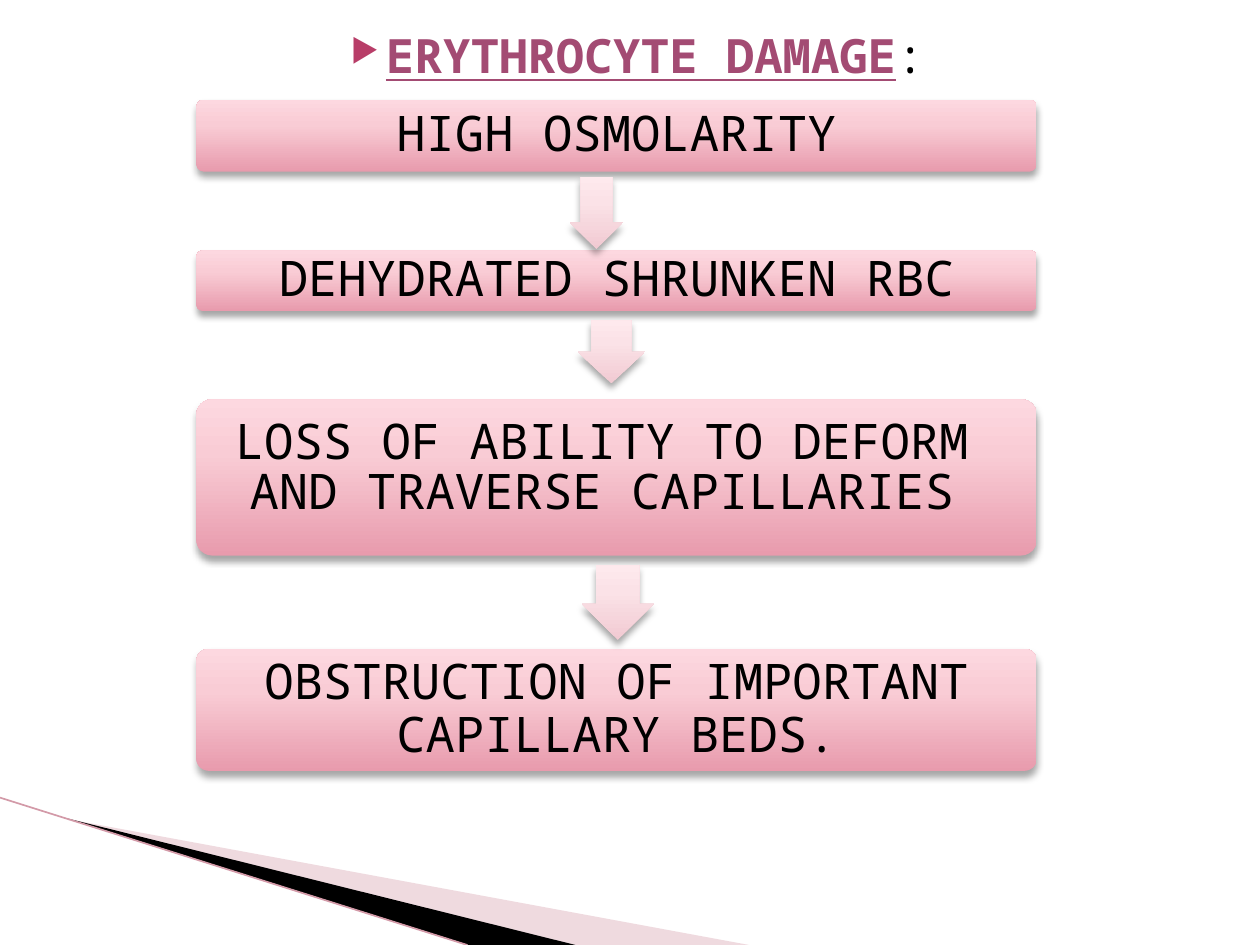
from lxml import etree
from pptx import Presentation
from pptx.dml.color import RGBColor
from pptx.enum.shapes import MSO_CONNECTOR, MSO_SHAPE
from pptx.enum.text import MSO_ANCHOR, PP_ALIGN
from pptx.oxml.ns import qn
from pptx.util import Cm, Pt

STRAIGHT = MSO_CONNECTOR.STRAIGHT
ROUNDED = MSO_SHAPE.ROUNDED_RECTANGLE
DOWN_ARROW = MSO_SHAPE.DOWN_ARROW
MIDDLE = MSO_ANCHOR.MIDDLE
CENTER = PP_ALIGN.CENTER

STEP_GRADIENT = [(0, "E89BAD"), (65, "F9CCD5"), (100, "FDD8E0")]
ARROW_GRADIENT = [(0, "F1CAD2"), (65, "FBE2E7"), (100, "FEE9ED")]


def color(hex_code):
    return RGBColor.from_string(hex_code)


def add_xml(parent, tag, **attributes):
    node = etree.SubElement(parent, qn(tag))
    for name, value in attributes.items():
        node.set(name, str(value))
    return node


class FlowSlide:
    font = "Noto Sans Mono"
    ink = "000000"

    def __init__(self, slide):
        self.slide = slide
        self.shapes = slide.shapes

    def style_run(self, run, size, hex_code, bold=False, underline=False):
        run.font.name = self.font
        run.font.size = Pt(size)
        run.font.bold = bold
        run.font.underline = underline
        run.font.color.rgb = color(hex_code)

    def wedge(self, points, hex_code, opacity=100):
        corners = [(Cm(x), Cm(y)) for x, y in points]
        builder = self.shapes.build_freeform(*corners[0])
        builder.add_line_segments(corners[1:], close=True)
        wedge = builder.convert_to_shape()
        wedge.shadow.inherit = False
        wedge.fill.solid()
        wedge.fill.fore_color.rgb = color(hex_code)
        wedge.line.fill.background()
        if opacity < 100:
            tint = next(wedge.fill._xPr.iter(qn("a:srgbClr")))
            add_xml(tint, "a:alpha", val=opacity * 1000)

    def edge(self, x1, y1, x2, y2, hex_code, width):
        edge = self.shapes.add_connector(STRAIGHT, Cm(x1), Cm(y1), Cm(x2), Cm(y2))
        edge.line.color.rgb = color(hex_code)
        edge.line.width = Pt(width)
        add_xml(edge._element.spPr, "a:effectLst")

    def heading(self, left, top, width, height, title, suffix):
        box = self.shapes.add_textbox(Cm(left), Cm(top), Cm(width), Cm(height))
        box.text_frame.word_wrap = True
        line = box.text_frame.paragraphs[0]
        line.alignment = CENTER
        properties = line._p.get_or_add_pPr()
        properties.set("marL", str(Cm(1.02)))
        properties.set("indent", str(-Cm(0.71)))
        add_xml(add_xml(properties, "a:buClr"), "a:srgbClr", val="B83D68")
        add_xml(properties, "a:buSzPct", val=68000)
        add_xml(properties, "a:buChar", char="▶")
        for text, hex_code, strong in ((title, "A34B73", True), (suffix, self.ink, False)):
            run = line.add_run()
            run.text = text
            self.style_run(run, 27, hex_code, strong, strong)

    def raised(self, preset, left, top, width, height, adjustments, gradient):
        """A borderless shape with a vertical gradient and a soft shadow."""
        shape = self.shapes.add_shape(preset, Cm(left), Cm(top), Cm(width), Cm(height))
        for index, value in enumerate(adjustments):
            shape.adjustments[index] = value
        shape.line.fill.background()
        shape.fill.gradient()
        shape.fill.gradient_angle = 90
        properties = shape._element.spPr
        stops = next(properties.iter(qn("a:gsLst")))
        for stop in list(stops):
            stops.remove(stop)
        for position, hex_code in gradient:
            stop = add_xml(stops, "a:gs", pos=position * 1000)
            add_xml(stop, "a:srgbClr", val=hex_code)
        shape.shadow.inherit = False
        shadow = add_xml(properties.find(qn("a:effectLst")), "a:outerShdw",
                         blurRad=Pt(4), dist=Pt(3), dir=5400000, rotWithShape=0)
        shade = add_xml(shadow, "a:srgbClr", val="000000")
        add_xml(shade, "a:alpha", val=35000)
        return shape

    def step(self, top, height, text, line_spacing):
        step = self.raised(ROUNDED, 3.96, top, 16.94, height, [0.1], STEP_GRADIENT)
        frame = step.text_frame
        frame.word_wrap = True
        frame.vertical_anchor = MIDDLE
        frame.margin_left = frame.margin_right = Cm(0.3)
        frame.margin_top = frame.margin_bottom = Cm(0.3)
        frame.text = text
        for paragraph in frame.paragraphs:
            paragraph.alignment = CENTER
            paragraph.line_spacing = line_spacing
            paragraph.space_after = Pt(9.8)
            for run in paragraph.runs:
                self.style_run(run, 28, self.ink)

    def arrow(self, left, top, width, height):
        self.raised(DOWN_ARROW, left, top, width, height, [0.6, 0.5], ARROW_GRADIENT)


def main():
    deck = Presentation()
    deck.slide_width, deck.slide_height = Cm(25.4), Cm(19.05)
    flow = FlowSlide(deck.slides.add_slide(deck.slide_layouts[6]))

    # Corner decoration
    flow.wedge([(1.4, 16.52), (15.1, 19.05), (11.58, 19.05)], "D8A3AF", 40)
    flow.wedge([(1.36, 16.5), (11.6, 19.05), (9.45, 19.05)], "000000")
    flow.edge(0, 16.08, 9.42, 19.05, "D39AA8", 0.95)

    # Heading
    flow.heading(1.27, 0.41, 22.86, 1.5, "ERYTHROCYTE DAMAGE", ":")

    # Steps of the flow
    steps = [
        (2.01, 1.45, "HIGH OSMOLARITY", 0.9),
        (5.05, 1.22, "DEHYDRATED SHRUNKEN RBC", 0.9),
        (8.05, 3.15, "LOSS OF ABILITY TO DEFORM \nAND TRAVERSE CAPILLARIES ", Pt(19)),
        (13.08, 2.46, "OBSTRUCTION OF IMPORTANT CAPILLARY BEDS.", 0.9),
    ]
    for step in steps:
        flow.step(*step)

    # Arrows between the steps
    for arrow in [(11.49, 3.57, 1.07, 1.45), (11.65, 6.46, 1.35, 1.27),
                  (11.73, 11.4, 1.45, 1.5)]:
        flow.arrow(*arrow)

    deck.save("out.pptx")


if __name__ == "__main__":
    main()
